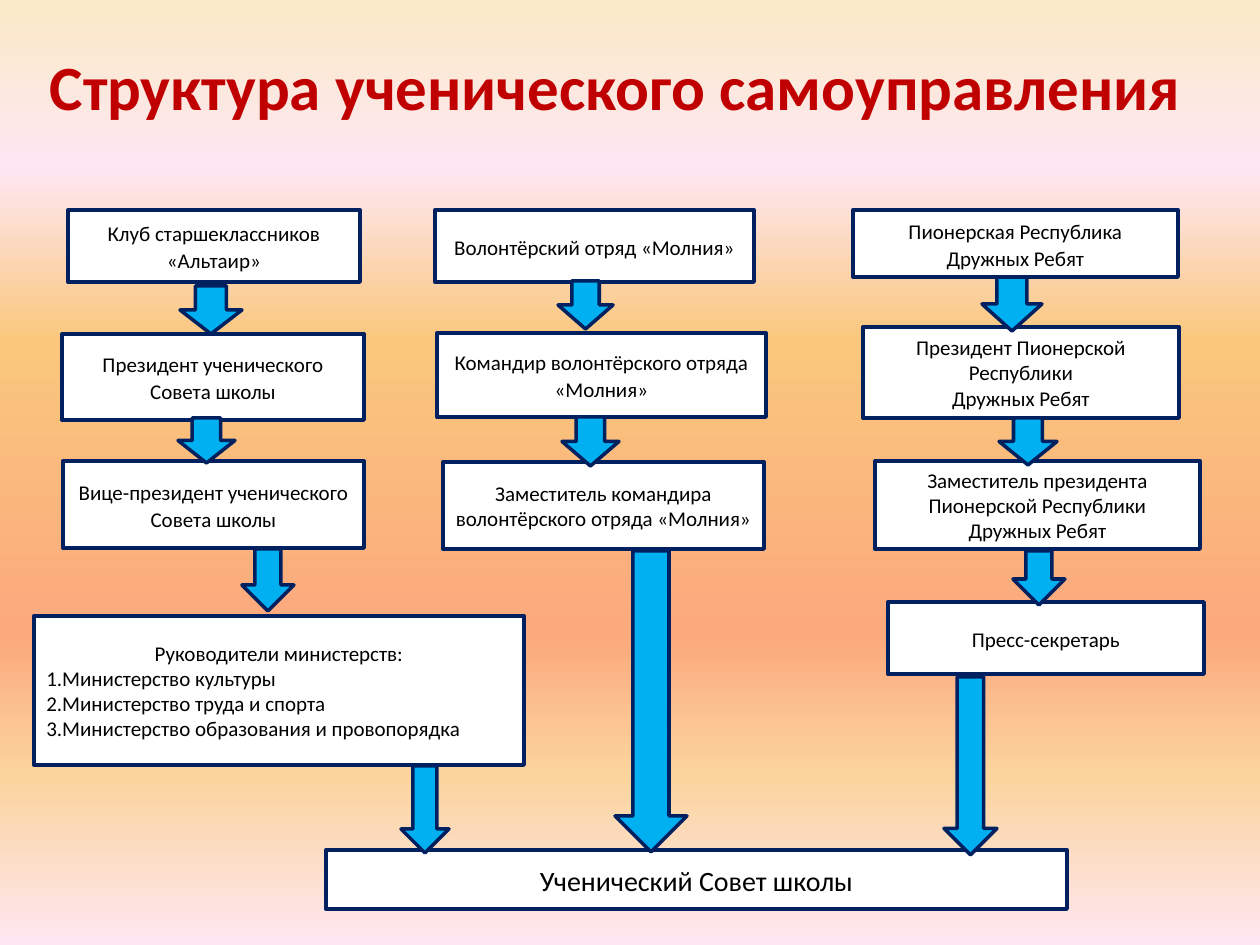
import copy
from dataclasses import dataclass

import pptx
import pptx.dml.color
import pptx.enum.shapes
import pptx.enum.text
import pptx.oxml.ns
import pptx.util

SCALE = 914400 / 126
COLOURS = {
    "title": "C00000",
    "text": "000000",
    "box": "FFFFFF",
    "arrow": "00B0F0",
    "line": "002060",
}
BACKGROUND_STOPS = {
    0: "FBEAC7", 18: "FEE7F2", 36: "FAC77D",
    67: "FBA97D", 82: "FBD49C", 100: "FEE7F2",
}
ALIGN = pptx.enum.text.PP_ALIGN
SHAPES = pptx.enum.shapes.MSO_SHAPE
AIRY = {
    "alignment": ALIGN.CENTER,
    "line_spacing": 1.07,
    "space_after": pptx.util.Pt(8),
}
TIGHT = {"alignment": ALIGN.CENTER}
LISTED = {"alignment": ALIGN.LEFT}


@dataclass
class Box:
    left: int
    top: int
    width: int
    height: int
    lines: tuple
    layout: dict
    size: int = 12


@dataclass
class Arrow:
    left: int
    top: int
    width: int
    height: int


TITLE = Box(15, 37, 1201, 97, ("Структура ученического самоуправления",), TIGHT, 36)
BOXES = [
    Box(68, 210, 292, 72, ("Клуб старшеклассников «Альтаир»",), AIRY),
    Box(62, 334, 302, 86, ("Президент ученического Совета школы",), AIRY),
    Box(63, 461, 301, 87, ("Вице-президент ученического Совета школы",), AIRY),
    Box(34, 616, 490, 149, (
        "Руководители министерств:",
        "1.Министерство культуры",
        "2.Министерство труда и спорта",
        "3.Министерство образования и провопорядка",
    ), LISTED),
    Box(435, 210, 319, 72, ("Волонтёрский отряд «Молния»",), AIRY),
    Box(437, 333, 329, 84, ("Командир волонтёрского отряда «Молния»",), AIRY),
    Box(443, 462, 321, 87, ("Заместитель командира волонтёрского отряда «Молния»",), TIGHT),
    Box(853, 210, 325, 67, ("Пионерская Республика Дружных Ребят",), AIRY),
    Box(863, 327, 316, 91, ("Президент Пионерской Республики", "Дружных Ребят"), TIGHT),
    Box(875, 461, 325, 88, ("Заместитель президента Пионерской Республики Дружных Ребят",), TIGHT),
    Box(888, 602, 316, 72, ("Пресс-секретарь",), AIRY),
    Box(326, 850, 741, 59, ("Ученический Совет школы",), AIRY, 16),
]
ARROWS = [
    Arrow(180, 286, 62, 48),
    Arrow(178, 418, 57, 45),
    Arrow(242, 549, 52, 62),
    Arrow(401, 766, 48, 87),
    Arrow(558, 281, 55, 48),
    Arrow(562, 417, 57, 49),
    Arrow(615, 551, 72, 301),
    Arrow(982, 277, 60, 54),
    Arrow(999, 418, 58, 47),
    Arrow(1013, 551, 52, 54),
    Arrow(944, 677, 53, 178),
]


def emu(pixels: int) -> int:
    return round(pixels * SCALE)


def colour(name: str):
    return pptx.dml.color.RGBColor.from_string(COLOURS[name])


def place(item) -> list:
    return [emu(value) for value in (item.left, item.top, item.width, item.height)]


def apply(target, values: dict) -> None:
    for name, value in values.items():
        setattr(target, name, value)


def paint_background(page) -> None:
    fill = page.background.fill
    fill.gradient()
    fill.gradient_angle = 270
    stop_list = next(page.element.iter(pptx.oxml.ns.qn("a:gsLst")))
    template = copy.deepcopy(stop_list[0])
    for stop in list(stop_list):
        stop_list.remove(stop)
    for position in BACKGROUND_STOPS:
        stop = copy.deepcopy(template)
        stop.set("pos", str(position * 1000))
        stop_list.append(stop)
    for stop, value in zip(fill.gradient_stops, BACKGROUND_STOPS.values()):
        stop.color.rgb = pptx.dml.color.RGBColor.from_string(value)


def write_text(shape, box: Box, colour_name: str, bold: bool) -> None:
    frame = shape.text_frame
    apply(frame, {"word_wrap": True, "vertical_anchor": pptx.enum.text.MSO_ANCHOR.MIDDLE})
    for index, line in enumerate(box.lines):
        para = frame.add_paragraph() if index else frame.paragraphs[0]
        apply(para, box.layout if index or box.layout is not LISTED else TIGHT)
        span = para.add_run()
        span.text = line
        apply(span.font, {"name": "Calibri", "size": pptx.util.Pt(box.size), "bold": bold})
        span.font.color.rgb = colour(colour_name)


def draw_shape(page, kind, item, fill_name: str, line_width: float):
    shape = page.shapes.add_shape(kind, *place(item))
    shape.shadow.inherit = False
    shape.fill.solid()
    shape.fill.fore_color.rgb = colour(fill_name)
    shape.line.color.rgb = colour("line")
    shape.line.width = pptx.util.Pt(line_width)
    return shape


def draw_box(page, box: Box) -> None:
    shape = draw_shape(page, SHAPES.RECTANGLE, box, "box", 2.25)
    write_text(shape, box, "text", False)


def draw_arrow(page, arrow: Arrow) -> None:
    draw_shape(page, SHAPES.DOWN_ARROW, arrow, "arrow", 2)


def main() -> None:
    deck = pptx.Presentation()
    apply(deck, {"slide_width": emu(1260), "slide_height": emu(945)})
    page = deck.slides.add_slide(deck.slide_layouts[6])
    paint_background(page)
    write_text(page.shapes.add_textbox(*place(TITLE)), TITLE, "title", True)
    for box in BOXES:
        draw_box(page, box)
    for arrow in ARROWS:
        draw_arrow(page, arrow)
    deck.save("out.pptx")


if __name__ == "__main__":
    main()
